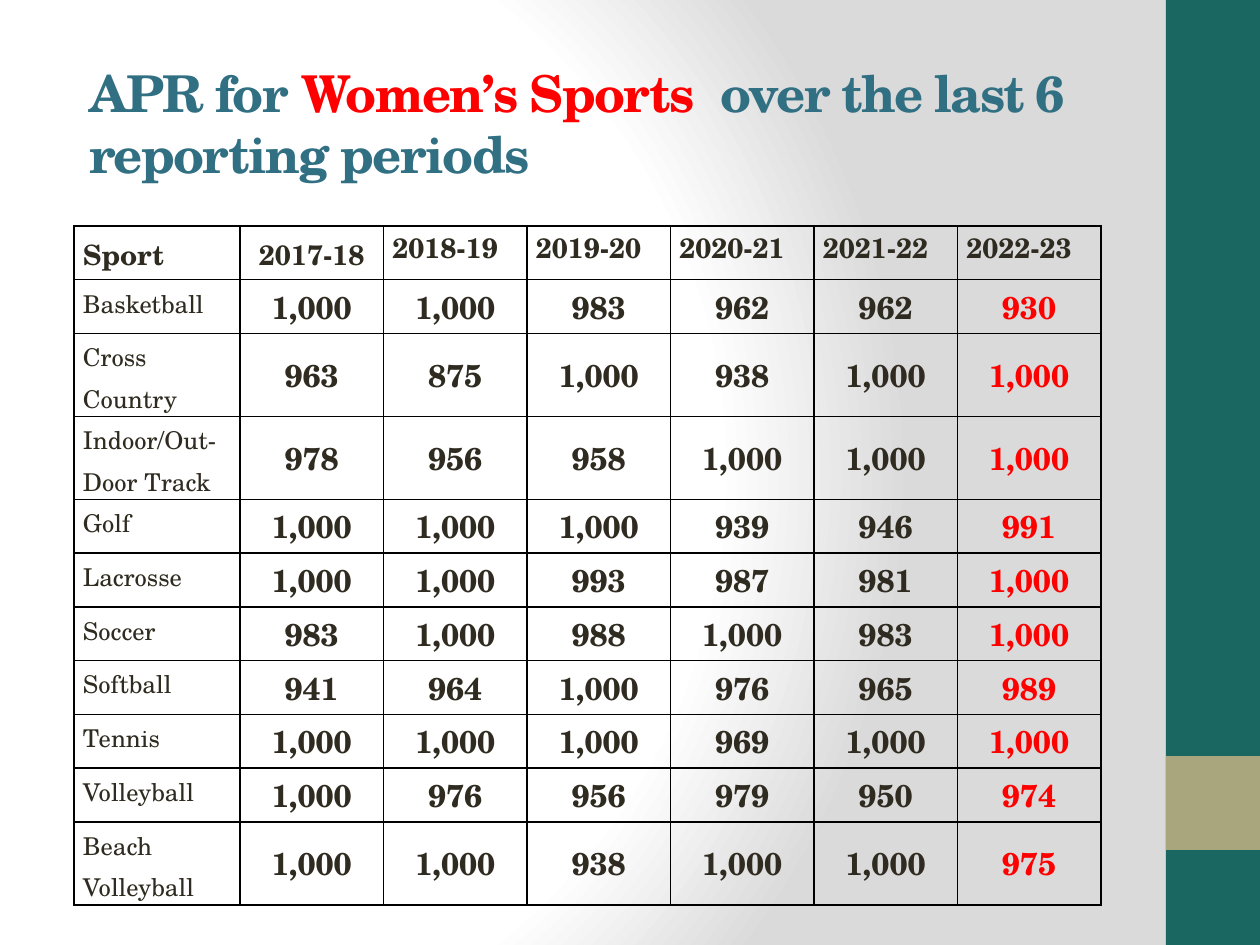
from pptx import Presentation, util as u
from pptx.dml.color import RGBColor
from pptx.enum import shapes, text
from pptx.oxml import parse_xml
from pptx.oxml.ns import nsdecls

PX = 914400 / 126
FONT = "TeX Gyre Schola"
COLORS = {
    "teal": "196760", "tan": "A9A57C", "blue": "316F83", "red": "FF0000",
    "ink": "2F2B20", "line": "000000", "white": "FFFFFF", "gray": "DADADA",
}
YEARS = ["2017-18", "2018-19", "2019-20", "2020-21", "2021-22", "2022-23"]
SCORES = {
    "Basketball": [1000, 1000, 983, 962, 962, 930],
    "Cross Country": [963, 875, 1000, 938, 1000, 1000],
    "Indoor/Out-Door Track": [978, 956, 958, 1000, 1000, 1000],
    "Golf": [1000, 1000, 1000, 939, 946, 991],
    "Lacrosse": [1000, 1000, 993, 987, 981, 1000],
    "Soccer": [983, 1000, 988, 1000, 983, 1000],
    "Softball": [941, 964, 1000, 976, 965, 989],
    "Tennis": [1000, 1000, 1000, 969, 1000, 1000],
    "Volleyball": [1000, 976, 956, 979, 950, 974],
    "Beach Volleyball": [1000, 1000, 938, 1000, 1000, 975],
}


def emu(px):
    return u.Emu(round(px * PX))


def color(name):
    return RGBColor.from_string(COLORS[name])


def style(font, size, name, bold=True):
    font.name, font.size, font.bold = FONT, u.Pt(size), bold
    font.color.rgb = color(name)


def paint_background(page):
    stops = "".join(
        f'<a:gs pos="{position}000"><a:srgbClr val="{COLORS[name]}"/></a:gs>'
        for position, name in [(0, "white"), (75, "white"), (100, "gray")])
    page.element.cSld.insert(0, parse_xml(
        f'<p:bg {nsdecls("p", "a")}><p:bgPr><a:gradFill rotWithShape="1">'
        f'<a:gsLst>{stops}</a:gsLst><a:path path="circle">'
        '<a:fillToRect l="20000" t="50000" r="100000" b="50000"/></a:path>'
        '</a:gradFill><a:effectLst/></p:bgPr></p:bg>'))


def add_sidebar(page, left, top, width, height):
    bands = [("teal", 0, height), ("tan", height * 4 // 5, width)]
    for name, offset, depth in bands:
        band = page.shapes.add_shape(
            shapes.MSO_SHAPE.RECTANGLE,
            emu(left), emu(top + offset), emu(width), emu(depth))
        band.shadow.inherit = False
        band.fill.solid()
        band.fill.fore_color.rgb = color(name)
        band.line.fill.background()


def add_title(page, left, top, width, height):
    box = page.shapes.add_textbox(emu(left), emu(top), emu(width), emu(height))
    frame = box.text_frame
    frame.word_wrap = True
    frame.vertical_anchor = text.MSO_ANCHOR.MIDDLE
    para = frame.paragraphs[0]
    for words, name in [("APR for ", "blue"), ("Women’s Sports  ", "red"),
                        ("over the last 6 reporting periods", "blue")]:
        span = para.add_run()
        span.text = words
        style(span.font, 29, name)
        span.font._element.set("spc", "-100")


def add_borders(cell):
    properties = cell._tc.get_or_add_tcPr()
    for index, side in enumerate("LRTB"):
        properties.insert(index, parse_xml(
            f'<a:ln{side} {nsdecls("a")} w="12700"><a:solidFill>'
            f'<a:srgbClr val="{COLORS["line"]}"/></a:solidFill></a:ln{side}>'))


def fill_cell(cell, words, size, name="ink", bold=True, spacing=None,
              centered=False, anchor=text.MSO_ANCHOR.TOP):
    cell.text = words
    cell.margin_left = cell.margin_right = emu(9)
    cell.margin_top = cell.margin_bottom = 0
    cell.vertical_anchor = anchor
    cell.fill.background()
    para = cell.text_frame.paragraphs[0]
    style(para.font, size, name, bold)
    if spacing:
        para.line_spacing = spacing
    if centered:
        para.alignment = text.PP_ALIGN.CENTER
    add_borders(cell)


def add_scores(page, left, top, width, height, sport_width, tall_row):
    table = page.shapes.add_table(
        len(SCORES) + 1, len(YEARS) + 1,
        emu(left), emu(top), emu(width), emu(height)).table
    table.first_row = table.horz_banding = False
    for column in table.columns:
        column.width = emu((width - sport_width) / len(YEARS))
    table.columns[0].width = emu(sport_width)
    tall_count = sum(" " in sport for sport in SCORES)
    short_row = (height - tall_count * tall_row) / (len(SCORES) + 1 - tall_count)
    for row, label in zip(table.rows, ["Sport", *SCORES]):
        row.height = emu(tall_row if " " in label else short_row)

    fill_cell(table.cell(0, 0), "Sport", 16, spacing=1.15)
    for column, year in enumerate(YEARS, 1):
        first = column == 1
        fill_cell(table.cell(0, column), year, 16,
                  spacing=1.15 if first else None, centered=first)
    for row, (sport, scores) in enumerate(SCORES.items(), 1):
        fill_cell(table.cell(row, 0), sport, 14, bold=False, spacing=1.15)
        for column, score in enumerate(scores, 1):
            fill_cell(table.cell(row, column), f"{score:,}", 18,
                      "red" if column == len(YEARS) else "ink",
                      centered=True, anchor=text.MSO_ANCHOR.MIDDLE)


def main():
    deck = Presentation()
    deck.slide_width, deck.slide_height = emu(1260), emu(945)
    page = deck.slides.add_slide(deck.slide_layouts[6])
    paint_background(page)
    add_sidebar(page, 1166, 0, 94, 945)
    add_title(page, 77, 81, 1046, 84)
    add_scores(page, 74, 226, 1027, 679, 166, 83)
    deck.save("out.pptx")


if __name__ == "__main__":
    main()
